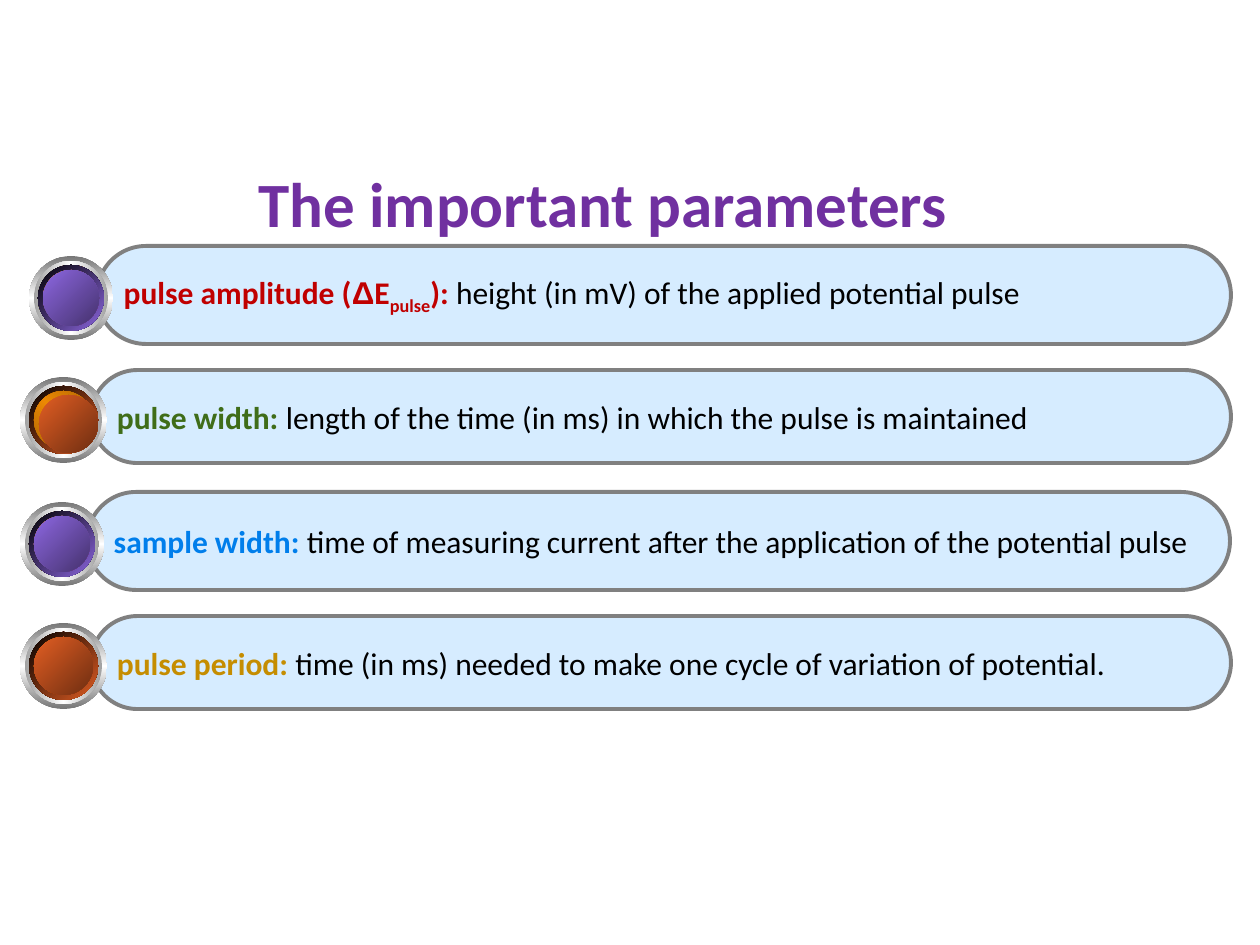
from dataclasses import dataclass

from lxml import etree
from pptx import Presentation
from pptx import util as u
from pptx.dml.color import RGBColor
from pptx.enum import shapes, text
from pptx.oxml.ns import qn

PX = 914400 / 126
COLORS = {
    "title": "7030A0", "pill": "D6ECFF", "border": "808080", "body": "000000",
    "amplitude": "C00000", "width": "3F6D19", "sample": "007EEB", "period": "C58D01",
    "steel": "767676", "silver": "A2A2A2", "white": "FFFFFF", "black": "000000",
    "amber": "EB8803", "bronze": "B46802",
    "purple": "8D67E1", "dark purple": "45326D",
    "orange": "E35E23", "dark orange": "6E2E11",
}


@dataclass(frozen=True)
class Span:
    words: str
    color: str
    bold: bool = True
    font: str = "Calibri"
    baseline: int = 0


@dataclass(frozen=True)
class Button:
    left: int
    top: int
    width: int
    height: int
    hue: str
    face_shift: tuple[int, int] = (0, 0)


@dataclass(frozen=True)
class Parameter:
    left: int
    top: int
    width: int
    height: int
    spans: tuple[Span, ...]
    button: Button


@dataclass(frozen=True)
class Ring:
    inset: int
    colors: tuple[str, ...]
    angle: int


def px(length: int) -> int:
    return round(length * PX)


def frame(*lengths: int) -> list[int]:
    return [px(length) for length in lengths]


def rgb(name: str) -> RGBColor:
    return RGBColor.from_string(COLORS[name])


def write_spans(para, spans: tuple[Span, ...], size: int) -> None:
    para.alignment = text.PP_ALIGN.LEFT
    for span in spans:
        run = para.add_run()
        run.text = span.words
        run.font.size = u.Pt(size)
        run.font.name = span.font
        run.font.bold = span.bold
        run.font.color.rgb = rgb(span.color)
        if span.baseline:
            run.font._element.set("baseline", str(span.baseline * 1000))


def fill_gradient(shape, colors: tuple[str, ...], angle: int) -> None:
    """Spread the colours evenly along a linear gradient."""
    shape.fill.gradient()
    gradient = shape._element.spPr.find(qn("a:gradFill"))
    stops = gradient.find(qn("a:gsLst"))
    for stop in list(stops):
        stops.remove(stop)
    for index, name in enumerate(colors):
        position = 100000 * index // (len(colors) - 1)
        stop = etree.SubElement(stops, qn("a:gs"), pos=str(position))
        etree.SubElement(stop, qn("a:srgbClr"), val=COLORS[name])
    gradient.find(qn("a:lin")).set("ang", str(angle * 60000))


def draw_button(page, button: Button) -> None:
    rings = (
        Ring(0, ("steel", "white", "steel"), 90),
        Ring(5, ("silver", "white", "silver"), 0),
        Ring(9, ("white", "amber", "white"), 45),
        Ring(9, ("black", button.hue), 45),
        Ring(14, ("bronze", "amber", "bronze"), 315),
        Ring(14, (button.hue, f"dark {button.hue}"), 45),
    )
    group = page.shapes.add_group_shape()
    for ring in rings:
        shift = button.face_shift if ring is rings[-1] else (0, 0)
        disc = group.shapes.add_shape(
            shapes.MSO_SHAPE.OVAL,
            *frame(button.left + ring.inset + shift[0], button.top + ring.inset + shift[1],
                   button.width - 2 * ring.inset, button.height - 2 * ring.inset))
        disc.shadow.inherit = False
        disc.line.fill.background()
        fill_gradient(disc, ring.colors, ring.angle)


def draw_parameter(page, item: Parameter) -> None:
    pill = page.shapes.add_shape(shapes.MSO_SHAPE.ROUNDED_RECTANGLE,
                                 *frame(item.left, item.top, item.width, item.height))
    pill.adjustments[0] = 0.5
    pill.shadow.inherit = False
    pill.fill.solid()
    pill.fill.fore_color.rgb = rgb("pill")
    pill.line.color.rgb = rgb("border")
    pill.line.width = u.Pt(2.25)
    pill.text_frame.word_wrap = False
    pill.text_frame.vertical_anchor = text.MSO_ANCHOR.MIDDLE
    write_spans(pill.text_frame.paragraphs[0], item.spans, 18)
    draw_button(page, item.button)


def draw_title(page) -> None:
    title = page.shapes.title
    title.left, title.top, title.width, title.height = frame(246, 158, 721, 89)
    title.text_frame.word_wrap = False
    title.text_frame.auto_size = text.MSO_AUTO_SIZE.SHAPE_TO_FIT_TEXT
    title.text_frame.vertical_anchor = text.MSO_ANCHOR.TOP
    write_spans(title.text_frame.paragraphs[0],
                (Span("The important parameters", "title"),), 36)


PARAMETERS = (
    Parameter(97, 246, 1134, 98, (
        Span("pulse amplitude (", "amplitude"),
        Span("Δ", "amplitude", font="Arial"),
        Span("E", "amplitude"),
        Span("pulse", "amplitude", baseline=-25),
        Span("): ", "amplitude"),
        Span("height (in mV) of the applied potential pulse", "body", bold=False),
    ), Button(29, 256, 84, 84, "purple")),
    Parameter(91, 370, 1140, 93, (
        Span("pulse width: ", "width"),
        Span("length of the time (in ms) in which the pulse is maintained", "body", bold=False),
    ), Button(20, 377, 87, 86, "orange", face_shift=(5, 4))),
    Parameter(87, 492, 1143, 98, (
        Span("sample width: ", "sample"),
        Span("time of measuring current after the application of the potential pulse",
             "body", bold=False),
    ), Button(20, 502, 84, 84, "purple")),
    Parameter(91, 616, 1140, 93, (
        Span("pulse period: ", "period"),
        Span("time (in ms) needed to make one cycle of variation of potential.",
             "body", bold=False),
    ), Button(20, 623, 87, 86, "orange")),
)


def main() -> None:
    deck = Presentation()
    deck.slide_width, deck.slide_height = frame(1260, 945)
    page = deck.slides.add_slide(deck.slide_layouts[5])

    # Heading
    draw_title(page)

    # One pill and button for each parameter
    for item in PARAMETERS:
        draw_parameter(page, item)

    deck.save("out.pptx")


if __name__ == "__main__":
    main()
